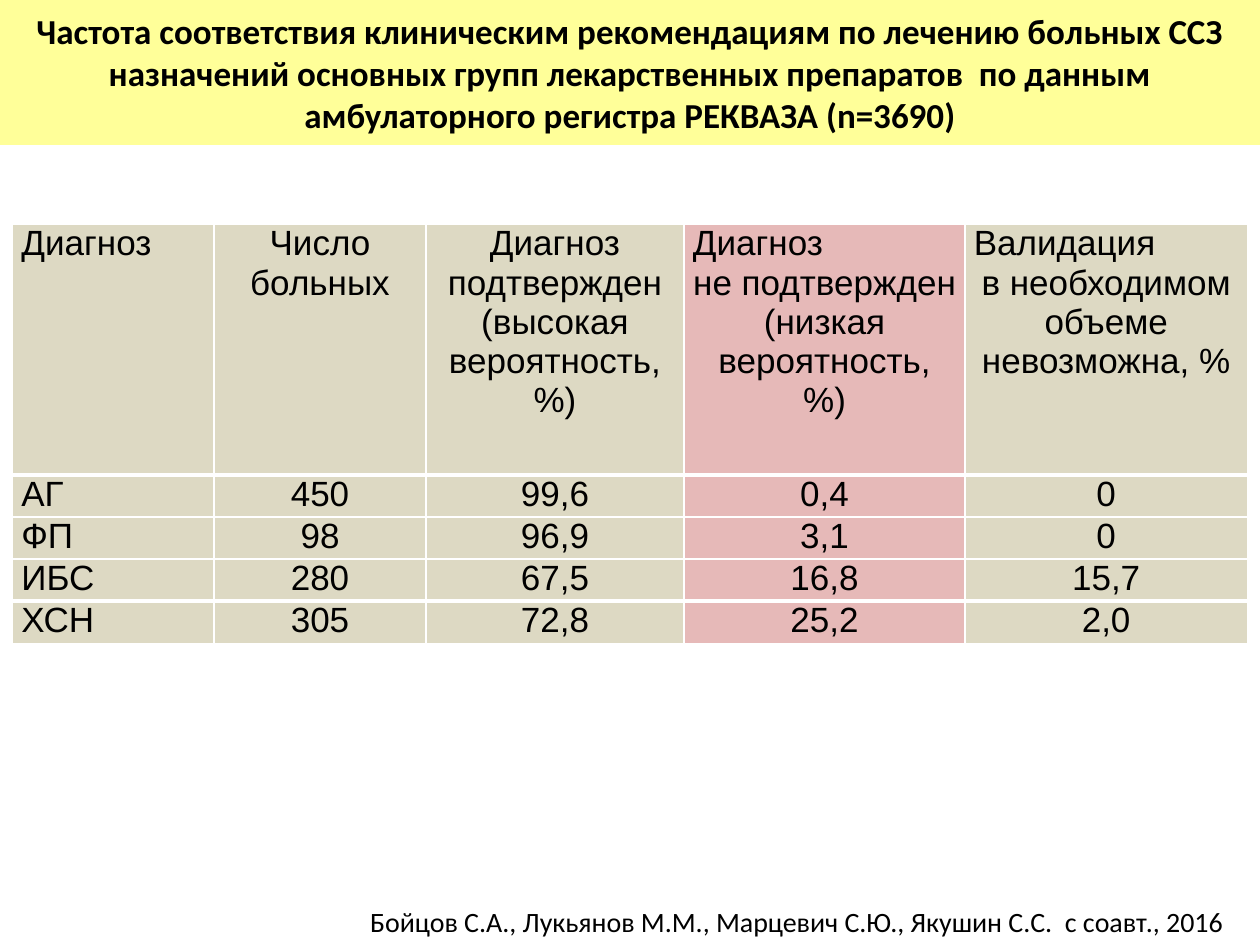
"""Build a slide with a table of diagnosis validation results."""
from dataclasses import dataclass

from lxml import etree
from pptx import Presentation
from pptx.dml.color import RGBColor
from pptx.enum.text import MSO_ANCHOR, MSO_AUTO_SIZE, PP_ALIGN
from pptx.oxml.ns import qn
from pptx.util import Inches, Pt

LEFT, CENTER, RIGHT = PP_ALIGN.LEFT, PP_ALIGN.CENTER, PP_ALIGN.RIGHT
MIDDLE, TOP = MSO_ANCHOR.MIDDLE, MSO_ANCHOR.TOP
NO_FIT = MSO_AUTO_SIZE.NONE
TITLE_ONLY = 5


@dataclass(frozen=True)
class Theme:
    """Colours, fonts and sizes of the slide."""
    ink: str = "000000"
    banner: str = "FFFF99"
    cell: str = "DDD9C3"
    accent: str = "E6B9B8"
    rule: str = "FFFFFF"
    text_font: str = "Calibri"
    table_font: str = "Arial"
    large: int = 20
    small: int = 16
    thin: int = 1
    thick: int = 3


THEME = Theme()
SLIDE_W, SLIDE_H = Inches(10), Inches(7.5)
COL_WIDTHS = (1.6, 1.68, 2.05, 2.23, 2.24)
HEADER_H, ROW_H = 1.99, 0.33
ACCENT_COL = 3
TITLE = ("Частота соответствия клиническим рекомендациям по лечению больных ССЗ "
         "назначений основных групп лекарственных препаратов  по данным "
         "амбулаторного регистра РЕКВАЗА (n=3690)")
SOURCE = "Бойцов С.А., Лукьянов М.М., Марцевич С.Ю., Якушин С.С.  с соавт., 2016"
ROWS = (
    ("Диагноз", "Число больных", "Диагноз подтвержден (высокая вероятность, %)",
     "Диагноз\nне подтвержден (низкая вероятность, %)",
     "Валидация\nв необходимом объеме невозможна, %"),
    ("АГ", "450", "99,6", "0,4", "0"),
    ("ФП", "98", "96,9", "3,1", "0"),
    ("ИБС", "280", "67,5", "16,8", "15,7"),
    ("ХСН", "305", "72,8", "25,2", "2,0"),
)


def set_attrs(obj, **values):
    """Set each named attribute of an object."""
    for name, value in values.items():
        setattr(obj, name, value)


def paint(fill, color):
    """Give a fill one solid colour."""
    fill.solid()
    fill.fore_color.rgb = RGBColor.from_string(color)


def write(tf, text, align, font, size, bold=False):
    """Write formatted paragraphs, each opening line of several flush left."""
    lines = text.split("\n")
    for i, line in enumerate(lines):
        p = tf.paragraphs[0] if i == 0 else tf.add_paragraph()
        p.alignment = LEFT if i < len(lines) - 1 else align
        r = p.add_run()
        r.text = line
        set_attrs(r.font, name=font, size=Pt(size), bold=bold)
        r.font.color.rgb = RGBColor.from_string(THEME.ink)


def add_title(slide):
    """Turn the title placeholder into a full-width banner."""
    sp = slide.shapes.title
    set_attrs(sp, left=0, top=0, width=SLIDE_W, height=Inches(1.15))
    paint(sp.fill, THEME.banner)
    set_attrs(sp.text_frame, vertical_anchor=MIDDLE, word_wrap=True, auto_size=NO_FIT)
    write(sp.text_frame, TITLE, CENTER, THEME.text_font, THEME.large, True)


def add_source(slide):
    """Add the source line at the bottom right."""
    sp = slide.shapes.add_textbox(Inches(1.61), Inches(7.13), Inches(8.2), Inches(0.37))
    sp.text_frame.word_wrap = True
    write(sp.text_frame, SOURCE, RIGHT, THEME.text_font, THEME.small)


def add_borders(cell, top, bottom):
    """Draw the four edges of a cell with the given top and bottom weights."""
    tc_pr = cell._tc.get_or_add_tcPr()
    weights = {"lnL": THEME.thin, "lnR": THEME.thin, "lnT": top, "lnB": bottom}
    for i, (tag, weight) in enumerate(weights.items()):
        ln = etree.Element(qn(f"a:{tag}"), w=str(Pt(weight)))
        fill = etree.SubElement(ln, qn("a:solidFill"))
        etree.SubElement(fill, qn("a:srgbClr"), val=THEME.rule)
        tc_pr.insert(i, ln)


def add_cell(cell, text, row, col):
    """Fill, frame and write one table cell."""
    paint(cell.fill, THEME.accent if col == ACCENT_COL else THEME.cell)
    set_attrs(cell, margin_left=Inches(0.07), margin_right=Inches(0.07),
              margin_top=0, margin_bottom=0, vertical_anchor=TOP)
    thick_edges = (1, len(ROWS) - 1)
    top, bottom = (THEME.thick if edge in thick_edges else THEME.thin
                   for edge in (row, row + 1))
    add_borders(cell, top, bottom)
    write(cell.text_frame, text, CENTER if col else LEFT, THEME.table_font, THEME.large)


def add_results(slide):
    """Add the table of validation results."""
    heights = [HEADER_H] + [ROW_H] * (len(ROWS) - 1)
    table = slide.shapes.add_table(
        len(ROWS), len(COL_WIDTHS), Inches(0.1), Inches(1.78),
        Inches(sum(COL_WIDTHS)), Inches(sum(heights))).table
    set_attrs(table, first_row=False, horz_banding=False)
    for column, width in zip(table.columns, COL_WIDTHS):
        column.width = Inches(width)
    for r, (values, height) in enumerate(zip(ROWS, heights)):
        table.rows[r].height = Inches(height)
        for c, text in enumerate(values):
            add_cell(table.cell(r, c), text, r, c)


def main():
    """Build and save the slide."""
    prs = Presentation()
    set_attrs(prs, slide_width=SLIDE_W, slide_height=SLIDE_H)
    slide = prs.slides.add_slide(prs.slide_layouts[TITLE_ONLY])
    add_source(slide)
    add_title(slide)
    add_results(slide)
    prs.save("out.pptx")


if __name__ == "__main__":
    main()
